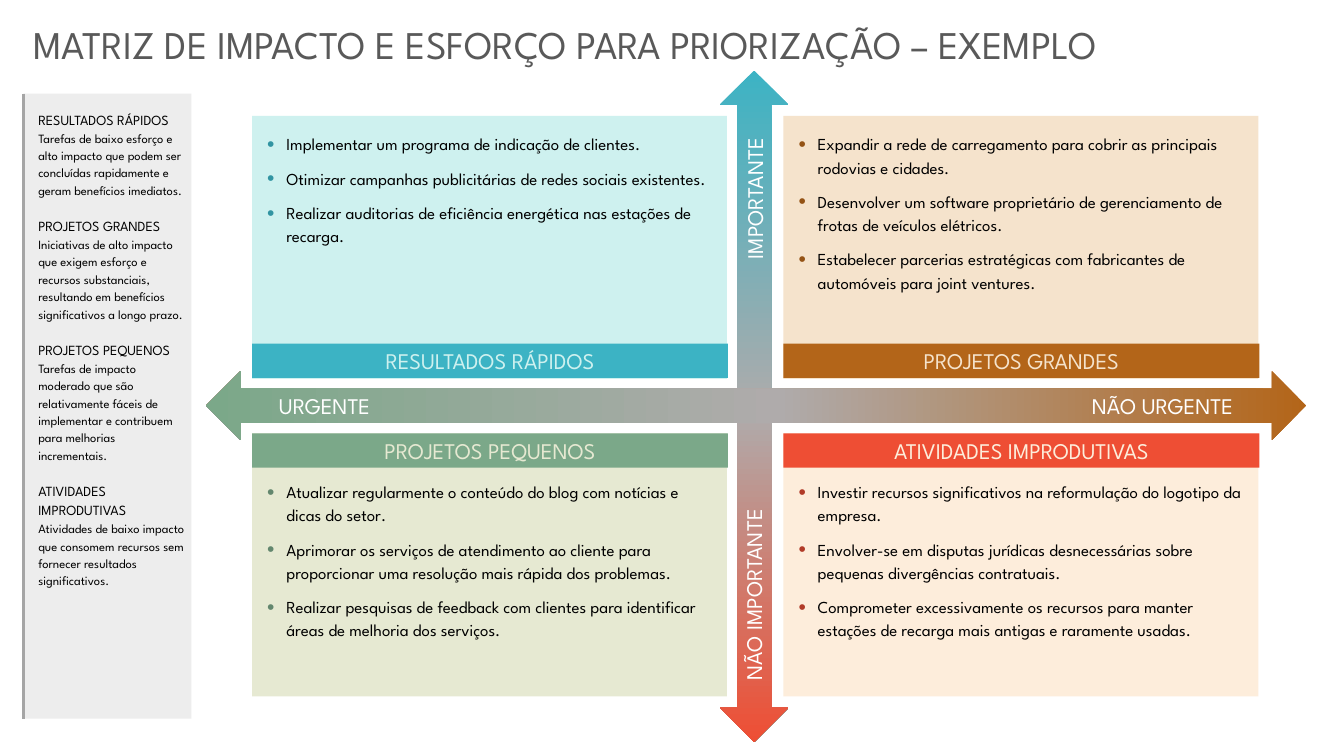
"""Build the impact and effort matrix slide."""
from copy import deepcopy
from dataclasses import dataclass

from lxml.etree import SubElement as Sub
from pptx import Presentation
from pptx.dml.color import RGBColor as RGB
from pptx.enum.shapes import MSO_CONNECTOR as LINK, MSO_SHAPE as FORM
from pptx.enum.text import MSO_ANCHOR as ANCHOR, MSO_AUTO_SIZE as FIT, PP_ALIGN as ALIGN
from pptx.oxml.ns import qn
from pptx.util import Pt

PX = 9144


@dataclass(frozen=True)
class Theme:
    face: str = "League Spartan"
    ink: str = "000000"
    title: str = "595959"
    white: str = "FFFFFF"
    side: str = "EDEDED"
    rule: str = "A5A5A5"
    mid: str = "AFABAB"
    teal: str = "3CB3C4"
    brown: str = "B36519"
    green: str = "7BA889"
    red: str = "EE4E34"
    tints: tuple = ("CEF1EF", "F5E3CC", "E6E9D2", "FDEDDB")
    dots: tuple = ("3194A2", "945315", "63876E", "B13B28")
    huge: int = 28
    large: int = 16
    body: int = 12
    head: int = 10
    note: int = 9


class Board:
    def __init__(self, deck, theme):
        self.theme = theme
        self.slide = deck.slides.add_slide(deck.slide_layouts[5])
        self.shapes = self.slide.shapes

    def font(self, para, size, color):
        font = para.font
        font.name, font.size = self.theme.face, Pt(size)
        font.bold = False
        font.color.rgb = RGB.from_string(color)

    def frame(self, shape, pads, anchor=ANCHOR.TOP):
        text = shape.text_frame
        text.word_wrap, text.auto_size = True, FIT.NONE
        text.vertical_anchor = anchor
        (text.margin_left, text.margin_top,
         text.margin_right, text.margin_bottom) = [p * PX for p in pads]
        return text

    def title(self, words, box):
        shape = self.shapes.title
        shape.left, shape.top, shape.width, shape.height = [v * PX for v in box]
        text = self.frame(shape, (10, 5, 10, 5))
        text.text = words
        para = text.paragraphs[0]
        para.alignment = ALIGN.LEFT
        self.font(para, self.theme.huge, self.theme.title)

    def shape(self, form, box):
        shape = self.shapes.add_shape(form, *[v * PX for v in box])
        shape.shadow.inherit = False
        shape.line.fill.background()
        return shape

    def rect(self, box, color):
        shape = self.shape(FORM.RECTANGLE, box)
        shape.fill.solid()
        shape.fill.fore_color.rgb = RGB.from_string(color)
        return shape

    def center(self, shape, words, color):
        text = self.frame(shape, (0, 0, 0, 0), ANCHOR.MIDDLE)
        text.text = words
        para = text.paragraphs[0]
        para.alignment = ALIGN.CENTER
        self.font(para, self.theme.large, color)

    def band(self, box, color, words, ink):
        self.center(self.rect(box, color), words, ink)

    def label(self, box, words, turn=0):
        shape = self.shapes.add_textbox(*[v * PX for v in box])
        shape.rotation = turn
        self.center(shape, words, self.theme.white)

    def arrow(self, box, stops, turn=0):
        shape = self.shape(FORM.UP_DOWN_ARROW, box)
        shape.rotation = turn
        shape.adjustments[0], shape.adjustments[1] = 0.463, 0.5
        fill = shape.fill
        fill.gradient()
        fill.gradient_angle = 270
        ramp = shape._element.spPr.find(".//" + qn("a:gsLst"))
        ramp.append(deepcopy(ramp[0]))
        for stop, (place, color) in zip(fill.gradient_stops, stops):
            stop.position = place
            stop.color.rgb = RGB.from_string(color)

    def paras(self, text, lines):
        for i, words in enumerate(lines):
            para = text.add_paragraph() if i else text.paragraphs[0]
            para.text = words
            para.alignment = ALIGN.LEFT
            para.line_spacing = 1.15
            yield i, para

    def list(self, box, color, dot, top, lines):
        text = self.frame(self.rect(box, color), (15, top, 10, 5))
        for _, para in self.paras(text, lines):
            para.space_after = Pt(8)
            props = para._p.get_or_add_pPr()
            props.set("marL", str(19 * PX))
            props.set("indent", str(-19 * PX))
            Sub(Sub(props, qn("a:buClr")), qn("a:srgbClr"), val=dot)
            Sub(props, qn("a:buSzPct"), val="125000")
            Sub(props, qn("a:buFont"), typeface="Arial")
            Sub(props, qn("a:buChar"), char="•")
            self.font(para, self.theme.body, self.theme.ink)

    def side(self, box, pairs):
        theme = self.theme
        text = self.frame(self.rect(box, theme.side), (15, 15, 6, 5))
        lines = [words for pair in pairs for words in pair]
        for i, para in self.paras(text, lines):
            if i and i % 2 == 0:
                para.space_before = Pt(12.4)
            self.font(para, theme.note if i % 2 else theme.head, theme.ink)

    def line(self, ends, color, width):
        link = self.shapes.add_connector(LINK.STRAIGHT, *[v * PX for v in ends])
        link.line.color.rgb = RGB.from_string(color)
        link.line.width = Pt(width)
        Sub(link._element.spPr, qn("a:effectLst"))


NAMES = ("RESULTADOS RÁPIDOS", "PROJETOS GRANDES",
         "PROJETOS PEQUENOS", "ATIVIDADES IMPRODUTIVAS")
NOTES = (
    "Tarefas de baixo esforço e alto impacto que podem ser concluídas rapidamente e geram benefícios imediatos.",
    "Iniciativas de alto impacto que exigem esforço e recursos substanciais, resultando em benefícios significativos a longo prazo.",
    "Tarefas de impacto moderado que são relativamente fáceis de implementar e contribuem para melhorias incrementais.",
    "Atividades de baixo impacto que consomem recursos sem fornecer resultados significativos.",
)
TASKS = (
    ("Implementar um programa de indicação de clientes.",
     "Otimizar campanhas publicitárias de redes sociais existentes.",
     "Realizar auditorias de eficiência energética nas estações de recarga."),
    ("Expandir a rede de carregamento para cobrir as principais rodovias e cidades.",
     "Desenvolver um software proprietário de gerenciamento de frotas de veículos elétricos.",
     "Estabelecer parcerias estratégicas com fabricantes de automóveis para joint ventures."),
    ("Atualizar regularmente o conteúdo do blog com notícias e dicas do setor.",
     "Aprimorar os serviços de atendimento ao cliente para proporcionar uma resolução mais rápida dos problemas.",
     "Realizar pesquisas de feedback com clientes para identificar áreas de melhoria dos serviços."),
    ("Investir recursos significativos na reformulação do logotipo da empresa.",
     "Envolver-se em disputas jurídicas desnecessárias sobre pequenas divergências contratuais.",
     "Comprometer excessivamente os recursos para manter estações de recarga mais antigas e raramente usadas."),
)


def main():
    deck = Presentation()
    deck.slide_width, deck.slide_height = 1333 * PX, 750 * PX
    theme = Theme()
    board = Board(deck, theme)
    board.title("MATRIZ DE IMPACTO E ESFORÇO PARA PRIORIZAÇÃO – EXEMPLO", (23, 15, 1273, 57))
    board.side((23, 93, 167, 620), zip(NAMES, NOTES))

    board.arrow((714, 70, 68, 666), ((0, theme.teal), (0.51, theme.mid), (1, theme.red)))
    board.arrow((716, -143, 68, 1091), ((0, theme.brown), (0.48, theme.mid), (1, theme.green)), 90)
    board.label((242, 387, 160, 30), "URGENTE")
    board.label((1058, 387, 190, 30), "NÃO URGENTE")
    board.label((639, 575, 216, 30), "NÃO IMPORTANTE", 270)
    board.label((658, 182, 180, 30), "IMPORTANTE", 270)

    bands = theme.teal, theme.brown, theme.green, theme.red
    for i, (name, tasks, tint, dot, band) in enumerate(zip(NAMES, TASKS, theme.tints, theme.dots, bands)):
        row, col = divmod(i, 2)
        left, top = 250 + 527 * col, 115 + 315 * row
        board.list((left, top, 471, 261), tint, dot, 15 + 30 * row, tasks)
        board.band((left, 341 + 89 * row, 472, 34), band, name, tint)

    board.line((23, 93, 23, 713), theme.rule, 2)
    deck.save("out.pptx")


if __name__ == "__main__":
    main()
